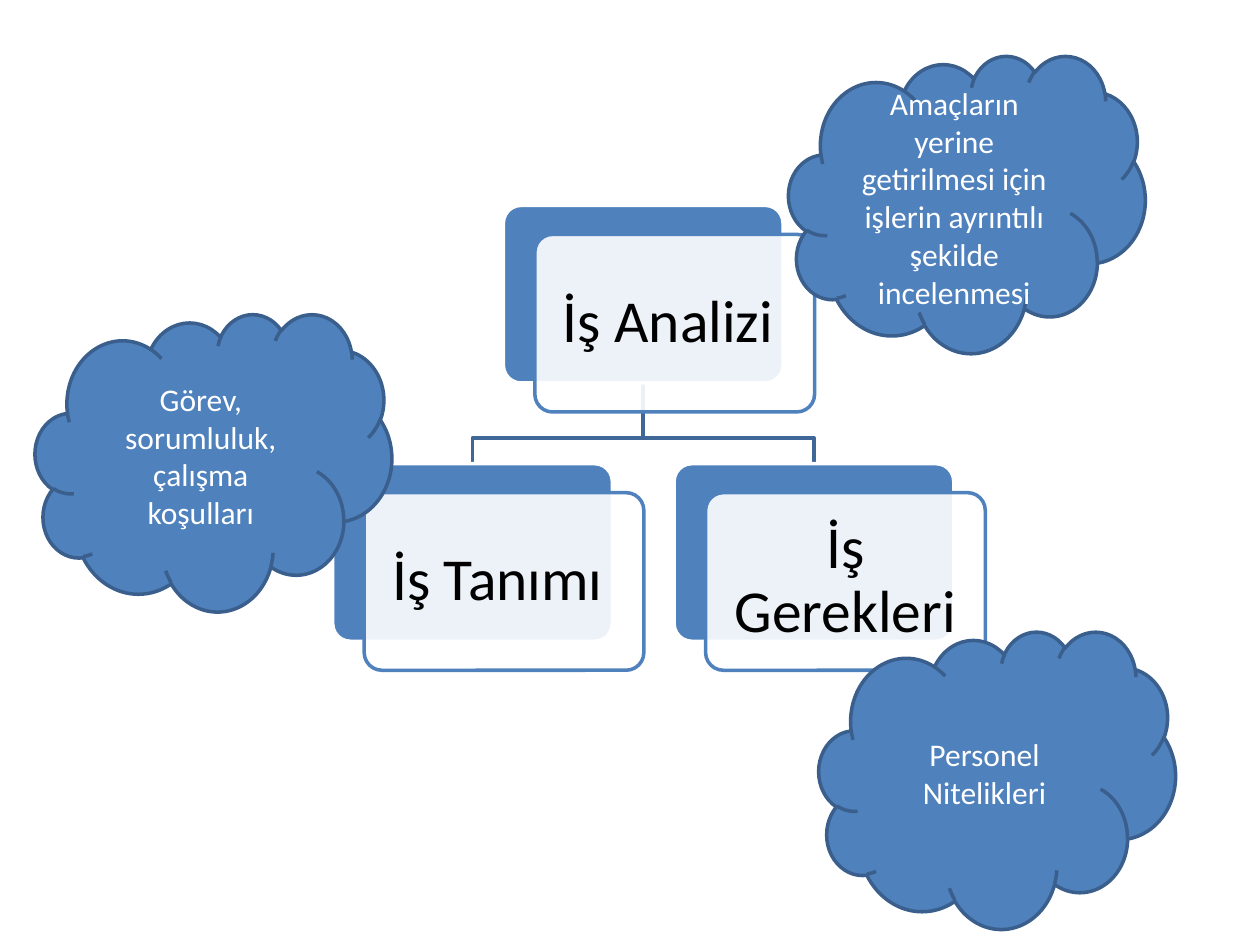
from dataclasses import dataclass
from typing import Optional

from pptx import Presentation
from pptx.dml.color import RGBColor
from pptx.enum.shapes import MSO_SHAPE
from pptx.enum.text import MSO_ANCHOR, PP_ALIGN
from pptx.oxml.ns import qn
from pptx.util import Inches, Pt
from lxml.etree import SubElement

COLORS = {
    "blue": "4F81BD",
    "cloud_edge": "3A5F8C",
    "link": "3F6797",
    "white": "FFFFFF",
    "black": "000000",
}
LEFT, TOP = 2.64, 1.63
COL, ROW = 2.71, 2.05
BOX_W, BOX_H = 2.22, 1.41
SHIFT_X, SHIFT_Y = 0.25, 0.23
CLOUD_W, CLOUD_H = 2.83, 2.36
BEND = 0.68


@dataclass(frozen=True)
class Node:
    text: str
    col: float
    row: int

    @property
    def x(self) -> float:
        return LEFT + self.col * COL

    @property
    def y(self) -> float:
        return TOP + self.row * ROW

    @property
    def mid(self) -> float:
        return self.x + BOX_W / 2


@dataclass(frozen=True)
class Cloud:
    text: str
    x: float
    y: float


ROOT = Node("İş Analizi ", 0.5, 0)
CHILDREN = [Node("İş Tanımı ", 0, 1), Node("İş Gerekleri", 1, 1)]
CLOUDS = [
    Cloud("Amaçların yerine getirilmesi için işlerin ayrıntılı şekilde incelenmesi", 6.26, 0.44),
    Cloud("Görev, sorumluluk, çalışma koşulları", 0.28, 2.49),
    Cloud("Personel Nitelikleri", 6.5, 5.01),
]


def rgb(name: str) -> RGBColor:
    return RGBColor.from_string(COLORS[name])


def paint(sp, fill: Optional[str], line: str, alpha: int = 100) -> None:
    sp.shadow.inherit = False
    sp.line.color.rgb = rgb(line)
    sp.line.width = Pt(2)
    if fill is None:
        sp.fill.background()
        return
    sp.fill.solid()
    sp.fill.fore_color.rgb = rgb(fill)
    if alpha < 100:
        clr = sp.fill._xPr.find(qn("a:solidFill"))[0]
        SubElement(clr, qn("a:alpha")).set("val", str(alpha * 1000))


def write(sp, text: str, *, size: int, color: str, spacing: Optional[float] = None,
          inset: Optional[float] = None) -> None:
    tf = sp.text_frame
    tf.word_wrap = True
    tf.vertical_anchor = MSO_ANCHOR.MIDDLE
    if inset is not None:
        tf.margin_left = tf.margin_right = tf.margin_top = tf.margin_bottom = Inches(inset)
    p = tf.paragraphs[0]
    p.alignment = PP_ALIGN.CENTER
    if spacing is not None:
        p.line_spacing = spacing
    r = p.add_run()
    r.text = text
    r.font.size = Pt(size)
    r.font.name = "Calibri"
    r.font.color.rgb = rgb(color)


def add_shape(s, kind: MSO_SHAPE, x: float, y: float, w: float, h: float):
    return s.shapes.add_shape(kind, Inches(x), Inches(y), Inches(w), Inches(h))


def add_link(s, parent: Node, child: Node) -> None:
    start = parent.y + BOX_H
    bend = start + BEND * (child.y - start)
    builder = s.shapes.build_freeform(Inches(parent.mid), Inches(start))
    points = [(parent.mid, bend), (child.mid, bend), (child.mid, child.y)]
    builder.add_line_segments([(Inches(x), Inches(y)) for x, y in points], close=False)
    paint(builder.convert_to_shape(), None, "link")


def add_node(s, node: Node) -> None:
    back = add_shape(s, MSO_SHAPE.ROUNDED_RECTANGLE, node.x, node.y, BOX_W, BOX_H)
    paint(back, "blue", "white")
    front = add_shape(s, MSO_SHAPE.ROUNDED_RECTANGLE,
                      node.x + SHIFT_X, node.y + SHIFT_Y, BOX_W, BOX_H)
    paint(front, "white", "blue", alpha=90)
    for sp in (back, front):
        sp.adjustments[0] = 0.1
    write(front, node.text, size=34, color="black", spacing=0.9, inset=0.14)


def add_cloud(s, cloud: Cloud) -> None:
    sp = add_shape(s, MSO_SHAPE.CLOUD, cloud.x, cloud.y, CLOUD_W, CLOUD_H)
    paint(sp, "blue", "cloud_edge")
    write(sp, cloud.text, size=18, color="white")


def main() -> None:
    prs = Presentation()
    prs.slide_width, prs.slide_height = Inches(10), Inches(7.5)
    s = prs.slides.add_slide(prs.slide_layouts[6])
    for child in reversed(CHILDREN):
        add_link(s, ROOT, child)
    for node in [ROOT, *CHILDREN]:
        add_node(s, node)
    for cloud in CLOUDS:
        add_cloud(s, cloud)
    prs.save("out.pptx")


if __name__ == "__main__":
    main()
